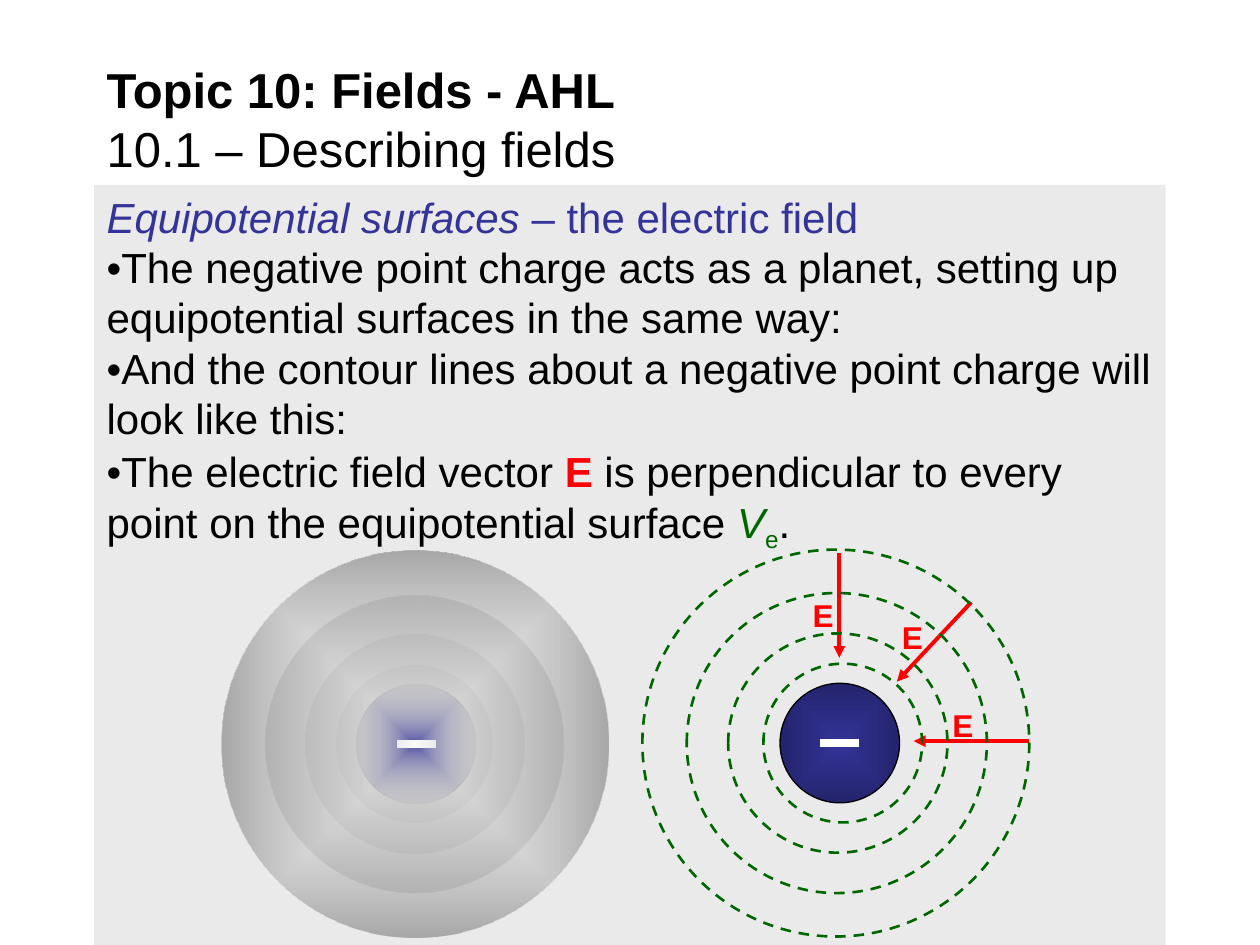
from lxml import etree
from pptx import Presentation
from pptx.dml.color import RGBColor
from pptx.enum.dml import MSO_LINE
from pptx.enum.shapes import MSO_CONNECTOR, MSO_SHAPE
from pptx.enum.text import MSO_ANCHOR, MSO_AUTO_SIZE, PP_ALIGN
from pptx.oxml import parse_xml
from pptx.oxml.ns import nsdecls, qn
from pptx.util import Cm, Pt

RECTANGLE, ELLIPSE = MSO_SHAPE.RECTANGLE, MSO_SHAPE.OVAL
STRAIGHT = MSO_CONNECTOR.STRAIGHT
DASH = MSO_LINE.DASH
TOP, MIDDLE = MSO_ANCHOR.TOP, MSO_ANCHOR.MIDDLE
LEFT = PP_ALIGN.LEFT
FIT_SHAPE = MSO_AUTO_SIZE.SHAPE_TO_FIT_TEXT

BLACK, WHITE, RED, GREEN = "000000", "FFFFFF", "FF0000", "006600"
INDIGO, GREY = "333399", "EAEAEA"

BODY = [
    [("Equipotential surfaces ", {"color": INDIGO, "italic": True}),
     ("– the electric field", {"color": INDIGO})],
    [("•The negative point charge acts as a planet, setting up "
      "equipotential surfaces in the same way:", {})],
    [("•And the contour lines about a negative point charge will "
      "look like this:", {})],
    [("•The electric field vector ", {}),
     ("E", {"color": RED, "bold": True}),
     (" is perpendicular to every point on the equipotential surface ", {}),
     ("V", {"color": GREEN, "italic": True}),
     ("e", {"color": GREEN, "baseline": -25000}),
     (".", {})],
]

# All positions and sizes are in centimetres.
SURFACE_CENTRE = (8.36, 15)
SURFACE_DIAMETERS = (3.15, 4.42, 5.99, 7.8)
CONTOUR_Y = 14.98
CONTOURS = ((16.99, 3.2), (16.89, 4.42), (16.87, 6.05), (16.85, 7.8))
CHARGES = ((16.93, 14.98), (8.39, 15))
CHARGE_DIAMETER, MINUS_LENGTH = 2.41, 0.79
FIELD_ARROWS = (
    ((16.92, 11.15), (16.92, 13.26)),
    ((19.58, 12.14), (18.08, 13.74)),
    ((20.75, 14.94), (18.42, 14.94)),
)
FIELD_LABELS = ((16.13, 11.89), (17.93, 12.34), (18.95, 14.1))


def rgb(hex_color):
    return RGBColor.from_string(hex_color)


def add_run(paragraph, text, size, color=BLACK, baseline=None, **styles):
    run = paragraph.add_run()
    run.text = text
    run.font.color.rgb = rgb(color)
    for name, value in {"name": "Arial", "size": Pt(size), **styles}.items():
        setattr(run.font, name, value)
    if baseline:
        run.font._element.set("baseline", str(baseline))


def add_textbox(slide, left, top, width, height, **frame_format):
    box = slide.shapes.add_textbox(Cm(left), Cm(top), Cm(width), Cm(height))
    for name, value in frame_format.items():
        setattr(box.text_frame, name, value)
    return box.text_frame.paragraphs[0]


def add_title(slide):
    title = add_textbox(slide, 1.9, 1.14, 21.6, 2.49,
                        word_wrap=True, vertical_anchor=MIDDLE)
    add_run(title, "Topic 10: Fields - AHL", 28, bold=True)
    title.add_line_break()
    add_run(title, "10.1 – Describing fields", 28)


def add_body(slide):
    panel = slide.shapes.add_shape(RECTANGLE, Cm(1.9), Cm(3.73),
                                   Cm(21.6), Cm(15.32))
    panel.shadow.inherit = False
    panel.fill.solid()
    panel.fill.fore_color.rgb = rgb(GREY)
    panel.line.fill.background()
    frame = panel.text_frame
    frame.word_wrap = True
    frame.vertical_anchor = TOP
    for index, parts in enumerate(BODY):
        paragraph = frame.add_paragraph() if index else frame.paragraphs[0]
        paragraph.alignment = LEFT
        for text, styles in parts:
            add_run(paragraph, text, 24, **styles)
    paragraph.line_spacing = 0.9
    paragraph.space_before = Pt(4.8)


def add_circle(slide, x, y, diameter, color=None, width=0.75, dash=None):
    """Add an unfilled circle around (x, y); no color means no outline."""
    circle = slide.shapes.add_shape(
        ELLIPSE, Cm(x - diameter / 2), Cm(y - diameter / 2),
        Cm(diameter), Cm(diameter))
    circle.shadow.inherit = False
    circle.fill.background()
    if color:
        circle.line.color.rgb = rgb(color)
        circle.line.width = Pt(width)
        circle.line.dash_style = dash
    else:
        circle.line.fill.background()
    return circle


def shade_to_edge(circle, color, centre_alpha=100):
    """Fill from color in the centre to a darker shade of it at the edge."""
    gradient = parse_xml(
        f'<a:gradFill {nsdecls("a")} rotWithShape="1"><a:gsLst>'
        f'<a:gs pos="0"><a:srgbClr val="{color}">'
        f'<a:alpha val="{centre_alpha * 1000}"/></a:srgbClr></a:gs>'
        f'<a:gs pos="100000"><a:srgbClr val="{color}">'
        f'<a:shade val="46275"/></a:srgbClr></a:gs></a:gsLst>'
        f'<a:path path="shape"><a:fillToRect l="50000" t="50000" '
        f'r="50000" b="50000"/></a:path></a:gradFill>')
    properties = circle._element.spPr
    properties.replace(properties.find(qn("a:noFill")), gradient)


def add_line(slide, start, end, color, width, arrow=False):
    line = slide.shapes.add_connector(STRAIGHT, *map(Cm, start + end))
    line.line.color.rgb = rgb(color)
    line.line.width = Pt(width)
    if arrow:
        etree.SubElement(line.line._get_or_add_ln(), qn("a:tailEnd"),
                         type="triangle")
    etree.SubElement(line._element.spPr, qn("a:effectLst"))


def add_negative_charge(slide, x, y):
    shade_to_edge(add_circle(slide, x, y, CHARGE_DIAMETER, BLACK), INDIGO)
    half = MINUS_LENGTH / 2
    add_line(slide, (x - half, y), (x + half, y), WHITE, 4.5)


def main():
    prs = Presentation()
    prs.slide_width, prs.slide_height = Cm(25.4), Cm(19.05)
    slide = prs.slides.add_slide(prs.slide_layouts[6])

    add_body(slide)
    for x, y in CHARGES:
        add_negative_charge(slide, x, y)
    add_title(slide)
    for start, end in FIELD_ARROWS:
        add_line(slide, start, end, RED, 2.25, arrow=True)
    for left, top in FIELD_LABELS:
        label = add_textbox(slide, left, top, 0.94, 1.02,
                            word_wrap=False, auto_size=FIT_SHAPE)
        add_run(label, "E", 18, RED, bold=True)
    for diameter in SURFACE_DIAMETERS:
        surface = add_circle(slide, *SURFACE_CENTRE, diameter)
        shade_to_edge(surface, GREY, centre_alpha=4)
    for x, diameter in CONTOURS:
        add_circle(slide, x, CONTOUR_Y, diameter, GREEN, 1.5, DASH)

    prs.save("out.pptx")


if __name__ == "__main__":
    main()
